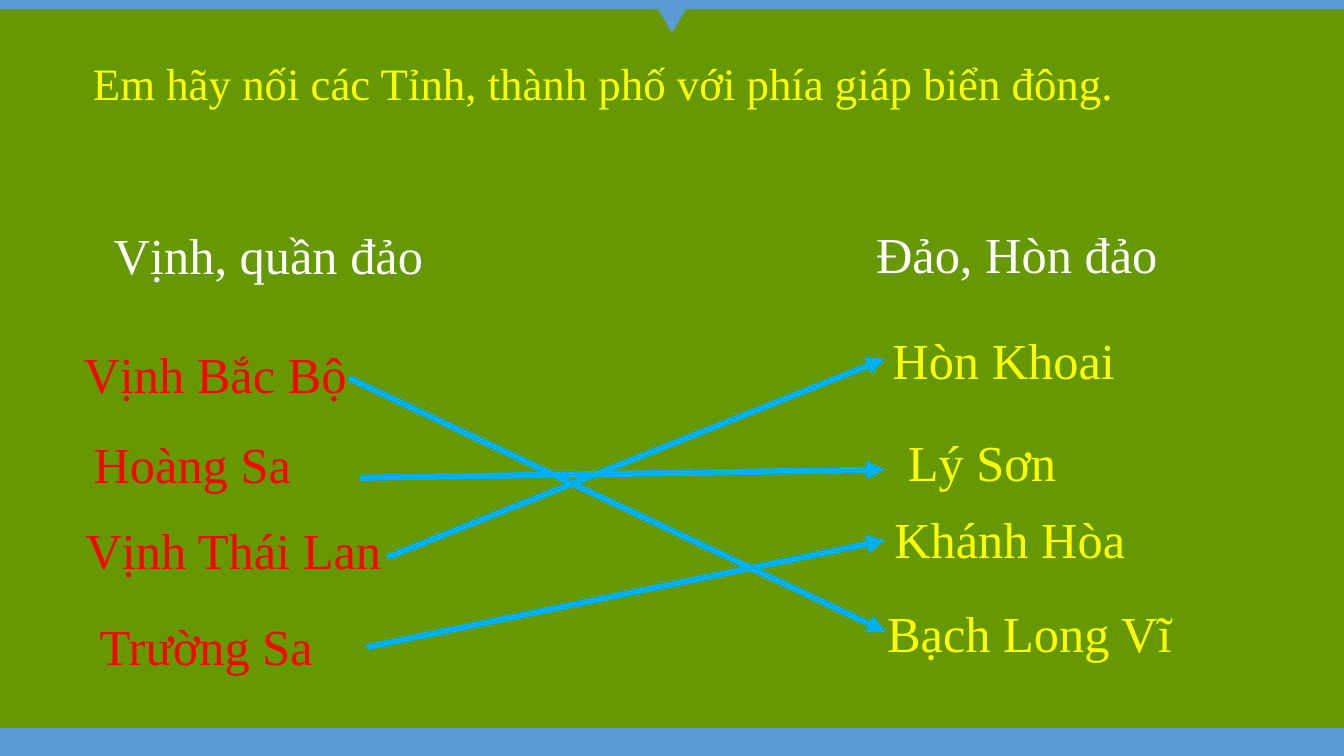
from lxml.etree import SubElement
from pptx import Presentation
from pptx.dml.color import RGBColor as Color
from pptx.enum.shapes import MSO_CONNECTOR as Connector, MSO_SHAPE as Shape
from pptx.enum.text import MSO_AUTO_SIZE as AutoSize, PP_ALIGN as Align
from pptx.oxml.ns import qn
from pptx.util import Inches, Pt

# Content: text, left, top, width
TITLE = ("Em hãy nối các Tỉnh, thành phố với phía giáp biển đông.", 0.75, 0.5, 10.47)
HEADINGS = [
    ("Vịnh, quần đảo", 1.03, 2.17, 3.27),
    ("Đảo, Hòn đảo", 8.59, 2.16, 3.08),
]
REGIONS = [
    ("Vịnh Bắc Bộ", 0.73, 3.35, 2.91),
    ("Hoàng Sa", 0.83, 4.25, 2.55),
    ("Vịnh Thái Lan", 0.75, 5.1, 3.26),
    ("Trường Sa", 0.89, 6.05, 2.55),
]
ISLANDS = [
    ("Hòn Khoai", 8.59, 3.22, 2.73),
    ("Lý Sơn", 8.78, 4.23, 1.92),
    ("Khánh Hòa", 8.74, 4.99, 2.55),
    ("Bạch Long Vĩ", 8.67, 5.92, 3.08),
]
# Matching arrows: start x, start y, end x, end y
MATCHES = [
    (3.46, 3.75, 8.79, 6.27),
    (3.57, 4.74, 8.78, 4.66),
    (3.84, 5.53, 8.78, 3.56),
    (3.64, 6.42, 8.78, 5.36),
]
WIDTH, HEIGHT = 13.33, 7.5


class Theme:
    font = "Times New Roman"
    title_size, label_size = Pt(32), Pt(36)
    arrow_width = Pt(4.5)
    background = Color.from_string("669900")
    band = Color.from_string("5B9BD5")
    yellow = Color.from_string("FFFF00")
    red = Color.from_string("FF0000")
    white = Color.from_string("FFFFFF")
    arrow = Color.from_string("00B0F0")


def add_band(page, kind, left, top, width, height):
    band = page.shapes.add_shape(kind, Inches(left), Inches(top), Inches(width), Inches(height))
    band.shadow.inherit = False
    band.fill.solid()
    band.fill.fore_color.rgb = Theme.band
    band.line.fill.background()
    return band


def add_label(page, label, color, size=Theme.label_size, align=Align.LEFT):
    text, left, top, width = label
    height = 0.1 + size.pt * 1.2 / 72
    box = page.shapes.add_textbox(Inches(left), Inches(top), Inches(width), Inches(height))
    frame = box.text_frame
    frame.word_wrap = True
    frame.auto_size = AutoSize.SHAPE_TO_FIT_TEXT
    para = frame.paragraphs[0]
    para.text = text
    para.alignment = align
    para.font.name = Theme.font
    para.font.size = size
    para.font.color.rgb = color


def add_arrow(page, match):
    arrow = page.shapes.add_connector(Connector.STRAIGHT, *map(Inches, match))
    arrow.line.color.rgb = Theme.arrow
    arrow.line.width = Theme.arrow_width
    SubElement(arrow.line._get_or_add_ln(), qn("a:tailEnd"), type="triangle")
    SubElement(arrow._element.spPr, qn("a:effectLst"))


def main():
    deck = Presentation()
    deck.slide_width, deck.slide_height = Inches(WIDTH), Inches(HEIGHT)
    page = deck.slides.add_slide(deck.slide_layouts[6])
    page.background.fill.solid()
    page.background.fill.fore_color.rgb = Theme.background

    # Bands and pointer
    add_band(page, Shape.RECTANGLE, 0, 7.22, WIDTH, HEIGHT - 7.22)
    add_band(page, Shape.RECTANGLE, 0, 0, WIDTH, 0.09)
    pointer = add_band(page, Shape.ISOSCELES_TRIANGLE, (WIDTH - 0.38) / 2, 0, 0.38, 0.33)
    pointer.rotation = 180

    # Title and the two columns
    add_label(page, TITLE, Theme.yellow, Theme.title_size, Align.CENTER)
    for region in REGIONS:
        add_label(page, region, Theme.red)
    for heading in HEADINGS:
        add_label(page, heading, Theme.white)
    for island in ISLANDS:
        add_label(page, island, Theme.yellow, align=Align.CENTER)

    # Arrows from regions to islands
    for match in MATCHES:
        add_arrow(page, match)

    deck.save("out.pptx")


if __name__ == "__main__":
    main()
